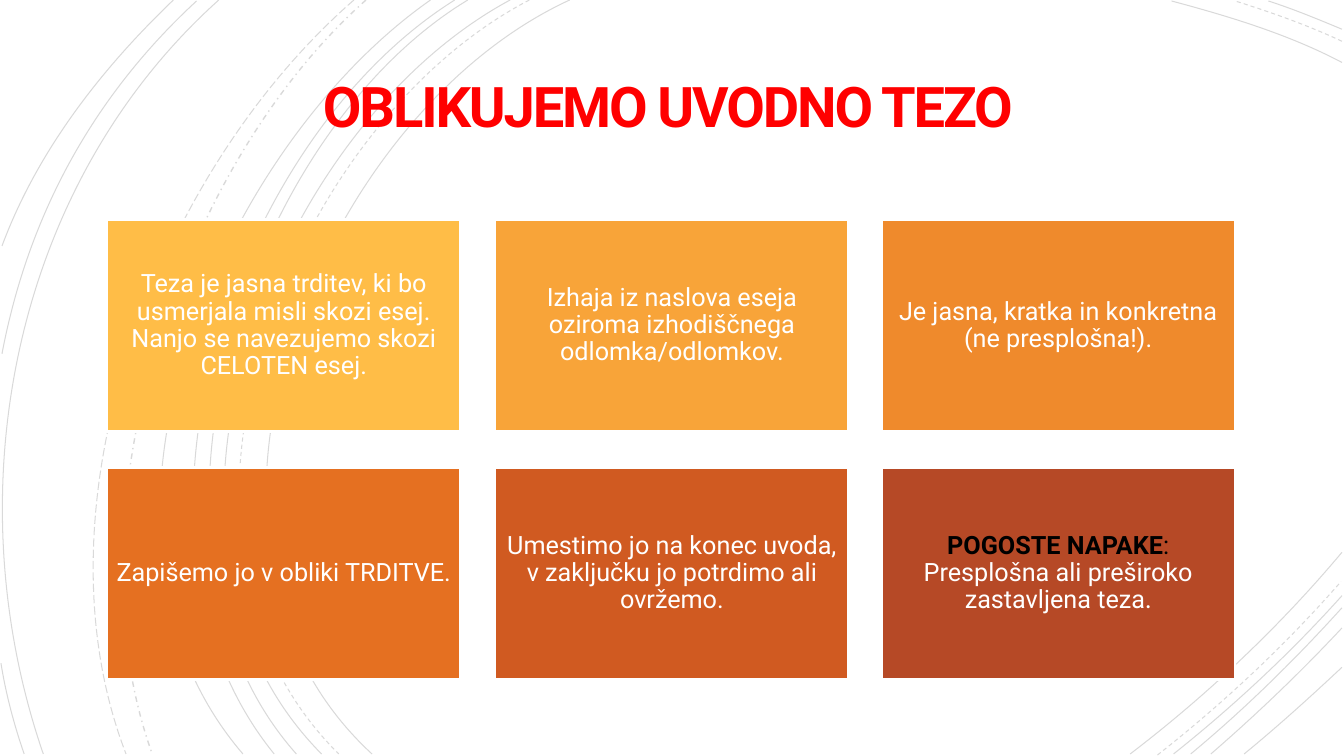
from lxml import etree
from pptx import Presentation
from pptx.dml.color import RGBColor
from pptx.enum.dml import MSO_LINE
from pptx.enum.shapes import MSO_SHAPE
from pptx.enum.text import MSO_ANCHOR, PP_ALIGN
from pptx.oxml.ns import qn
from pptx.util import Pt

PX = 9144  # EMU per px, 100 px to the inch
SOLID, DASH = MSO_LINE.SOLID, MSO_LINE.DASH
DASH_DOT, LONG_DASH = MSO_LINE.DASH_DOT, MSO_LINE.LONG_DASH
RECTANGLE = MSO_SHAPE.RECTANGLE
MIDDLE, CENTER = MSO_ANCHOR.MIDDLE, PP_ALIGN.CENTER

WHITE = RGBColor(0xFF, 0xFF, 0xFF)
BLACK = RGBColor(0, 0, 0)
RED = RGBColor(0xFF, 0, 0)
AMBER = RGBColor(0xFF, 0xBD, 0x47)
APRICOT = RGBColor(0xF8, 0xA4, 0x39)
ORANGE = RGBColor(0xEF, 0x8A, 0x2C)
PUMPKIN = RGBColor(0xE5, 0x70, 0x21)
RUST = RGBColor(0xD0, 0x5A, 0x21)
BRICK = RGBColor(0xB6, 0x49, 0x26)

# Content: title and cards, each text a list of (wording, format)
TITLE = [("OBLIKUJEMO UVODNO TEZO", {"size": Pt(40), "color": RED, "bold": True})]
CARDS = [
    (AMBER, [("Teza je jasna trditev, ki bo usmerjala misli skozi esej. "
              "Nanjo se navezujemo skozi CELOTEN esej.", {})]),
    (APRICOT, [("Izhaja iz naslova eseja oziroma izhodiščnega odlomka/odlomkov.", {})]),
    (ORANGE, [("Je jasna, kratka in konkretna (ne presplošna!).", {})]),
    (PUMPKIN, [("Zapišemo jo v obliki TRDITVE.", {})]),
    (RUST, [("Umestimo jo na konec uvoda, v zaključku jo potrdimo ali ovržemo.", {})]),
    (BRICK, [("POGOSTE NAPAKE", {"color": BLACK, "bold": True}),
             (": ", {"color": BLACK}),
             ("Presplošna ali preširoko zastavljena teza", {}),
             (".", {"name": "Calibri"})]),
]
CARD_FORMAT = {"name": "Roboto", "size": Pt(18), "color": WHITE, "bold": False}

# Background arcs: dash, width in points, four Bezier points in px
ARCS = [
    (SOLID, 0.75, [(565, 0), (315, 115), (143, 540), (369, 748)]),
    (SOLID, 0.75, [(1331, 62), (1278, 34), (1218, 16), (1162, 1)]),
    (SOLID, 0.75, [(1121, 748), (1197, 690), (1269, 622), (1331, 548)]),
    (DASH, 0.75, [(525, 0), (285, 125), (123, 537), (336, 748)]),
    (DASH, 0.75, [(1331, 41), (1297, 25), (1260, 12), (1225, 1)]),
    (DASH, 0.75, [(1148, 749), (1213, 698), (1275, 640), (1330, 577)]),
    (SOLID, 0.75, [(506, 0), (270, 127), (110, 537), (319, 748)]),
    (SOLID, 0.75, [(1331, 29), (1307, 19), (1283, 9), (1258, 1)]),
    (SOLID, 0.75, [(1164, 748), (1223, 701), (1280, 648), (1331, 591)]),
    (SOLID, 0.75, [(464, 0), (244, 133), (110, 541), (294, 748)]),
    (SOLID, 0.75, [(1181, 748), (1234, 704), (1284, 655), (1331, 603)]),
    (SOLID, 0.75, [(451, 0), (231, 138), (97, 533), (272, 748)]),
    (SOLID, 0.75, [(1201, 748), (1246, 709), (1290, 667), (1331, 623)]),
    (SOLID, 0.75, [(427, 0), (217, 147), (53, 529), (241, 748)]),
    (SOLID, 0.75, [(1234, 748), (1267, 721), (1299, 692), (1331, 662)]),
    (DASH_DOT, 1, [(363, 0), (176, 166), (65, 509), (151, 748)]),
    (LONG_DASH, 0.75, [(351, 0), (157, 169), (29, 499), (125, 748)]),
    (SOLID, 0.75, [(217, 0), (11, 185), (-46, 490), (43, 748)]),
    (SOLID, 0.75, [(195, 1), (92, 96), (28, 214), (2, 351)]),
    (SOLID, 0.75, [(1, 658), (6, 689), (14, 719), (24, 748)]),
    (SOLID, 0.75, [(172, 0), (100, 69), (37, 150), (2, 244)]),
]
ARC_ALPHA = "15000"

# Card grid in px
SLIDE_WIDTH, SLIDE_HEIGHT = 1333, 750
COLUMNS = [106, 491, 874]
ROWS = [218, 464]
CARD_WIDTH, CARD_HEIGHT = 351, 210


def draw_arc(shapes, dash, width, points):
    start, *rest = points
    builder = shapes.build_freeform(*start, scale=PX)
    builder.add_line_segments(rest, close=False)
    arc = builder.convert_to_shape()
    arc.shadow.inherit = False
    arc.fill.background()
    arc.line.color.rgb = BLACK
    arc.line.width = Pt(width)
    arc.line.dash_style = dash
    color = arc.element.xpath(".//a:ln//a:srgbClr")[0]
    etree.SubElement(color, qn("a:alpha"), val=ARC_ALPHA)
    # Join the three segments into one cubic curve
    segments = arc.element.xpath(".//a:lnTo")
    outline = segments[0].getparent()
    curve = etree.SubElement(outline, qn("a:cubicBezTo"))
    for segment in segments:
        curve.append(segment[0])
        outline.remove(segment)


def draw_block(shapes, left, top, width, height, color):
    block = shapes.add_shape(RECTANGLE, left * PX, top * PX, width * PX, height * PX)
    block.shadow.inherit = False
    block.fill.solid()
    block.fill.fore_color.rgb = color
    block.line.fill.background()
    return block


def write_text(shape, runs, inset, line_spacing):
    frame = shape.text_frame
    frame_format = {"word_wrap": True, "vertical_anchor": MIDDLE}
    for side in ("left", "top", "right", "bottom"):
        frame_format["margin_" + side] = inset * PX
    for key, value in frame_format.items():
        setattr(frame, key, value)
    paragraph = frame.paragraphs[0]
    paragraph.alignment = CENTER
    paragraph.line_spacing = line_spacing
    for wording, changes in runs:
        run = paragraph.add_run()
        run.text = wording
        for key, value in {**CARD_FORMAT, **changes}.items():
            if key == "color":
                run.font.color.rgb = value
            else:
                setattr(run.font, key, value)
    return paragraph


def main():
    prs = Presentation()
    prs.slide_width, prs.slide_height = SLIDE_WIDTH * PX, SLIDE_HEIGHT * PX
    shapes = prs.slides.add_slide(prs.slide_layouts[6]).shapes

    # White backdrop and its arcs
    draw_block(shapes, 0, 0, SLIDE_WIDTH, SLIDE_HEIGHT, WHITE)
    for arc in ARCS:
        draw_arc(shapes, *arc)

    # Title with tightened letters
    title = shapes.add_textbox(188 * PX, 52 * PX, 949 * PX, 115 * PX)
    heading = write_text(title, TITLE, 25, 0.85)
    heading.runs[0].font._element.set("spc", "-150")

    # Cards, row by row
    for i, (color, runs) in enumerate(CARDS):
        row, column = divmod(i, len(COLUMNS))
        card = draw_block(shapes, COLUMNS[column], ROWS[row],
                          CARD_WIDTH, CARD_HEIGHT, color)
        card.line.color.rgb = WHITE
        card.line.width = Pt(2)
        write_text(card, runs, 7, 0.9)

    prs.save("out.pptx")


if __name__ == "__main__":
    main()
